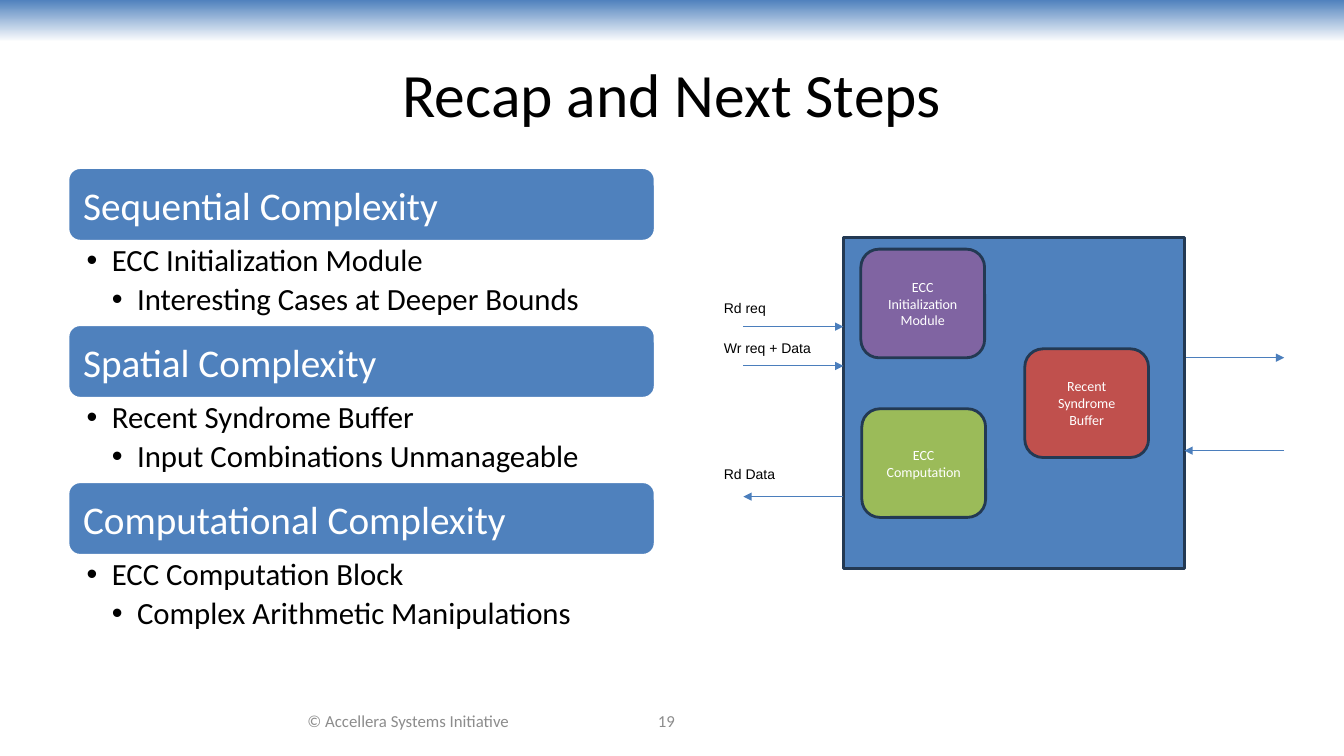
from dataclasses import dataclass

import pptx
import pptx.dml.color
import pptx.enum.shapes
import pptx.enum.text
import pptx.oxml.ns
import pptx.shapes.autoshape
import pptx.slide
import pptx.text.text
import pptx.util
from lxml import etree

Pt = pptx.util.Pt
RGBColor = pptx.dml.color.RGBColor
Shape = pptx.enum.shapes.MSO_SHAPE
Align = pptx.enum.text.PP_ALIGN
Anchor = pptx.enum.text.MSO_ANCHOR
qn = pptx.oxml.ns.qn

BLUE = RGBColor(0x4F, 0x81, 0xBD)
ARROW_BLUE = RGBColor(0x4B, 0x7E, 0xBC)
NAVY = RGBColor(0x23, 0x39, 0x53)
PURPLE = RGBColor(0x80, 0x64, 0xA2)
GREEN = RGBColor(0x9B, 0xBB, 0x59)
RED = RGBColor(0xC0, 0x50, 0x4D)
GREY = RGBColor(0x8C, 0x8C, 0x8C)
BLACK = RGBColor(0, 0, 0)
WHITE = RGBColor(0xFF, 0xFF, 0xFF)


@dataclass(frozen=True)
class Box:
    left: float
    top: float
    width: float
    height: float

    def lengths(self) -> tuple[pptx.util.Length, ...]:
        return Pt(self.left), Pt(self.top), Pt(self.width), Pt(self.height)


@dataclass(frozen=True)
class Style:
    size: float
    color: RGBColor
    font: str = "Calibri"
    align: Align = Align.LEFT


@dataclass(frozen=True)
class Topic:
    heading: str
    points: tuple[str, ...]


@dataclass(frozen=True)
class Block:
    left: float
    top: float
    fill: RGBColor
    lines: tuple[str, ...]


@dataclass(frozen=True)
class Signal:
    start: float
    end: float
    y: float


@dataclass(frozen=True)
class Label:
    text: str
    top: float
    width: float


TITLE = Style(44, BLACK, align=Align.CENTER)
HEADING = Style(28, WHITE)
POINT = Style(22, BLACK)
FOOTER = Style(12, GREY, align=Align.CENTER)
BLOCK_TEXT = Style(10, WHITE, align=Align.CENTER)
SIGNAL_TEXT = Style(10, BLACK, "Arial")

TOPICS = (
    Topic("Sequential Complexity",
          ("ECC Initialization Module", "Interesting Cases at Deeper Bounds")),
    Topic("Spatial Complexity",
          ("Recent Syndrome Buffer", "Input Combinations Unmanageable")),
    Topic("Computational Complexity",
          ("ECC Computation Block", "Complex Arithmetic Manipulations")),
)
TOPIC_LEFT, TOPIC_TOP, TOPIC_WIDTH, TOPIC_PITCH = 48.5, 119.7, 419.5, 112.2
BAR_HEIGHT, POINTS_HEIGHT, BULLET_INDENT = 52.6, 59, 18

MEMORY = Box(602.5, 169.8, 243.5, 236.2)
BLOCKS = (
    Block(614.9, 178, PURPLE, ("ECC", "Initialization", "Module")),
    Block(615.6, 292, GREEN, ("ECC", "Computation")),
    Block(732, 249.2, RED, ("Recent Syndrome Buffer",)),
)
SIGNALS = (
    Signal(531, 602.5, 233.3),
    Signal(531, 602.5, 261.4),
    Signal(602.5, 531, 354.7),
    Signal(847, 917.3, 255.5),
    Signal(917.3, 846, 321.9),
)
LABELS = (
    Label("Rd req", 210.4, 67),
    Label("Wr req + Data", 239, 92),
    Label("Rd Data", 329, 92),
)


def write(frame: pptx.text.text.TextFrame, lines: tuple[str, ...], style: Style,
          anchor: Anchor = Anchor.MIDDLE, bulleted: bool = False) -> None:
    frame.word_wrap = True
    frame.vertical_anchor = anchor
    for level, line in enumerate(lines):
        paragraph = frame.paragraphs[0] if level == 0 else frame.add_paragraph()
        paragraph.text = line
        paragraph.alignment = style.align
        if bulleted:
            properties = paragraph._p.get_or_add_pPr()
            properties.set("marL", str(Pt(BULLET_INDENT * (level + 1))))
            properties.set("indent", str(-Pt(BULLET_INDENT)))
            etree.SubElement(properties, qn("a:buFont"), typeface="Arial")
            etree.SubElement(properties, qn("a:buChar"), char="•")
            paragraph.line_spacing = 0.9
            paragraph.space_after = Pt(4)
        paragraph.font.size = Pt(style.size)
        paragraph.font.name = style.font
        paragraph.font.color.rgb = style.color


def add_text(slide: pptx.slide.Slide, box: Box, lines: tuple[str, ...], style: Style,
             anchor: Anchor = Anchor.MIDDLE, bulleted: bool = False,
             insets: tuple[float, float, float, float] = (7.2, 3.6, 7.2, 3.6)) -> None:
    frame = slide.shapes.add_textbox(*box.lengths()).text_frame
    (frame.margin_left, frame.margin_top,
     frame.margin_right, frame.margin_bottom) = map(Pt, insets)
    write(frame, lines, style, anchor, bulleted)


def add_panel(slide: pptx.slide.Slide, kind: Shape, box: Box, fill: RGBColor,
              outline: RGBColor) -> pptx.shapes.autoshape.Shape:
    panel = slide.shapes.add_shape(kind, *box.lengths())
    panel.shadow.inherit = False
    panel.fill.solid()
    panel.fill.fore_color.rgb = fill
    panel.line.color.rgb = outline
    panel.line.width = Pt(2)
    return panel


def add_topic(slide: pptx.slide.Slide, topic: Topic, top: float) -> None:
    bar = Box(TOPIC_LEFT, top, TOPIC_WIDTH, BAR_HEIGHT)
    add_panel(slide, Shape.ROUNDED_RECTANGLE, bar, BLUE, WHITE)
    inner = Box(bar.left + 2.5, top + 2.5, bar.width - 5, bar.height - 5)
    add_text(slide, inner, (topic.heading,), HEADING, insets=(8.4,) * 4)
    points = Box(bar.left, top + BAR_HEIGHT, bar.width, POINTS_HEIGHT)
    add_text(slide, points, topic.points, POINT, Anchor.TOP, True, (13.4, 2.8, 15.7, 2.8))


def add_signal(slide: pptx.slide.Slide, signal: Signal) -> None:
    arrow = slide.shapes.add_connector(
        pptx.enum.shapes.MSO_CONNECTOR.STRAIGHT,
        Pt(signal.start), Pt(signal.y), Pt(signal.end), Pt(signal.y))
    arrow.line.color.rgb = ARROW_BLUE
    arrow.line.width = Pt(0.75)
    etree.SubElement(arrow.line._get_or_add_ln(), qn("a:tailEnd"), type="triangle")
    etree.SubElement(arrow._element.spPr, qn("a:effectLst"))


def add_band(slide: pptx.slide.Slide) -> None:
    band = slide.shapes.add_shape(Shape.RECTANGLE, *Box(0, 0, 960, 30).lengths())
    band.shadow.inherit = False
    band.line.fill.background()
    band.fill.gradient()
    band.fill.gradient_angle = 270
    for stop, color in zip(band.fill.gradient_stops, (BLUE, WHITE)):
        stop.color.rgb = color


def main() -> None:
    presentation = pptx.Presentation()
    presentation.slide_width, presentation.slide_height = Pt(960), Pt(540)
    slide = presentation.slides.add_slide(presentation.slide_layouts[6])

    # Top band, title and footer
    add_band(slide)
    add_text(slide, Box(48, 21.6, 864, 90), ("Recap and Next Steps",), TITLE)
    add_text(slide, Box(175.7, 500.5, 232, 28.8), ("© Accellera Systems Initiative",), FOOTER)
    add_text(slide, Box(384, 500.5, 184, 28.8), ("19",), FOOTER)

    # Kinds of complexity
    for row, topic in enumerate(TOPICS):
        add_topic(slide, topic, TOPIC_TOP + row * TOPIC_PITCH)

    # Memory block diagram
    add_panel(slide, Shape.RECTANGLE, MEMORY, BLUE, NAVY)
    for block in BLOCKS:
        panel = add_panel(slide, Shape.ROUNDED_RECTANGLE,
                          Box(block.left, block.top, 88.4, 77.6), block.fill, NAVY)
        write(panel.text_frame, block.lines, BLOCK_TEXT)
    for signal in SIGNALS:
        add_signal(slide, signal)
    for label in LABELS:
        add_text(slide, Box(510, label.top, label.width, 19.4), (label.text,),
                 SIGNAL_TEXT, Anchor.TOP)

    presentation.save("out.pptx")


if __name__ == "__main__":
    main()
